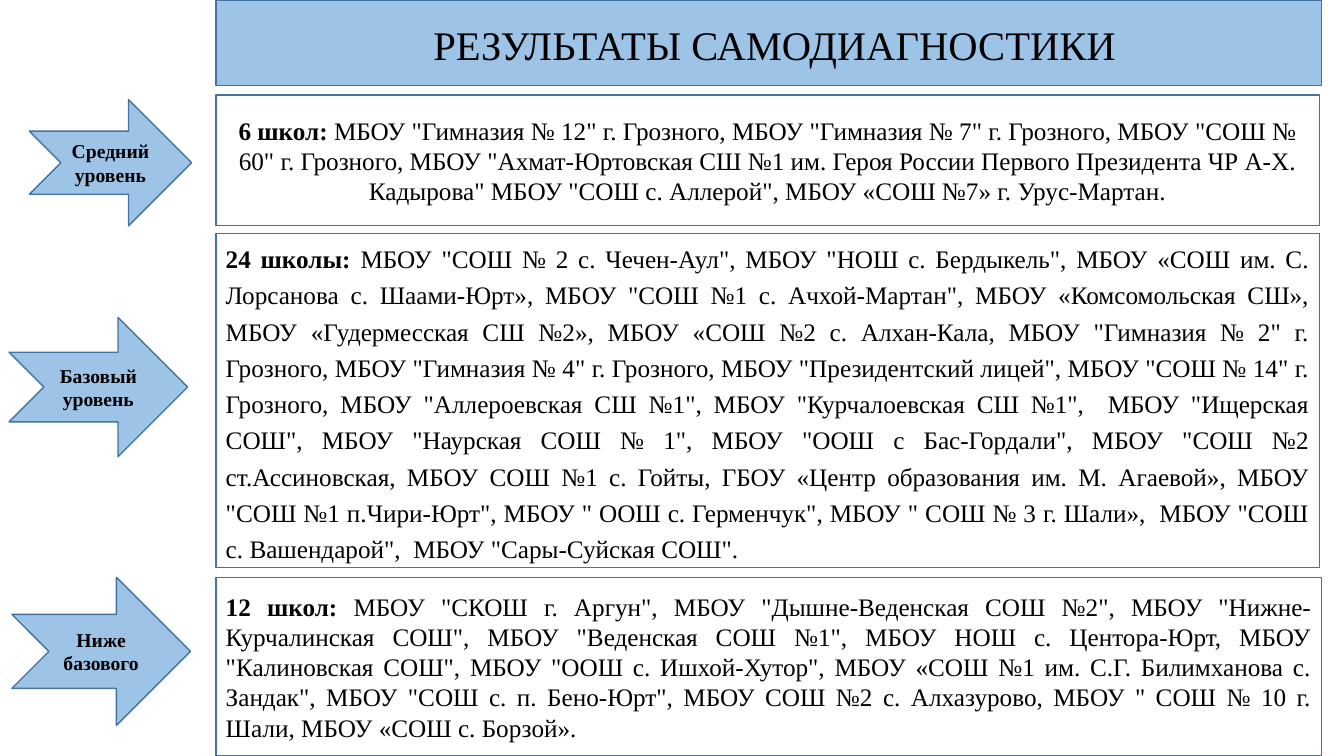
from pptx import Presentation
from pptx.dml.color import RGBColor
from pptx.enum.shapes import MSO_SHAPE
from pptx.enum.text import MSO_ANCHOR, MSO_AUTO_SIZE, PP_ALIGN
from pptx.util import Cm, Pt

RECT = MSO_SHAPE.RECTANGLE
ARROW = MSO_SHAPE.NOTCHED_RIGHT_ARROW
MIDDLE = MSO_ANCHOR.MIDDLE
FIXED = MSO_AUTO_SIZE.NONE
CENTER = PP_ALIGN.CENTER
JUSTIFY = PP_ALIGN.JUSTIFY

TITLE = 'РЕЗУЛЬТАТЫ САМОДИАГНОСТИКИ'
LEVELS = [
    {
        'label': 'Средний уровень',
        'arrow': (0.74, 2.51, 4.09, 3.18),
        'box': (2.39, 27.81, 3.3),
        'align': CENTER,
        'lines': 1.0,
        'count': '6 школ: ',
        'schools': 'МБОУ "Гимназия № 12" г. Грозного, МБОУ "Гимназия № 7" г. Грозного, '
                   'МБОУ "СОШ № 60" г. Грозного, МБОУ "Ахмат-Юртовская СШ №1 им. Героя '
                   'России Первого Президента ЧР А-Х. Кадырова" МБОУ "СОШ с. Аллерой", '
                   'МБОУ «СОШ №7» г. Урус-Мартан.',
    },
    {
        'label': 'Базовый уровень',
        'arrow': (0.23, 8.0, 4.5, 3.51),
        'box': (5.89, 27.81, 8.41),
        'align': JUSTIFY,
        'lines': 1.2,
        'count': '24 школы: ',
        'schools': 'МБОУ "СОШ № 2 с. Чечен-Аул", МБОУ "НОШ с. Бердыкель", МБОУ «СОШ им. '
                   'С. Лорсанова с. Шаами-Юрт», МБОУ "СОШ №1 с. Ачхой-Мартан", МБОУ '
                   '«Комсомольская СШ», МБОУ «Гудермесская СШ №2», МБОУ «СОШ №2 с. '
                   'Алхан-Кала, МБОУ "Гимназия № 2" г. Грозного, МБОУ "Гимназия № 4" г. '
                   'Грозного, МБОУ "Президентский лицей", МБОУ "СОШ № 14" г. Грозного, '
                   'МБОУ "Аллероевская СШ №1", МБОУ "Курчалоевская СШ №1",  МБОУ '
                   '"Ищерская СОШ", МБОУ "Наурская СОШ № 1", МБОУ "ООШ с Бас-Гордали", '
                   'МБОУ "СОШ №2 ст.Ассиновская, МБОУ СОШ №1 с. Гойты, ГБОУ «Центр '
                   'образования им. М. Агаевой», МБОУ "СОШ №1 п.Чири-Юрт", МБОУ " ООШ с. '
                   'Герменчук", МБОУ " СОШ № 3 г. Шали»,  МБОУ "СОШ с. Вашендарой",  '
                   'МБОУ "Сары-Суйская СОШ".',
    },
    {
        'label': 'Ниже базового',
        'arrow': (0.3, 14.55, 4.5, 3.73),
        'box': (14.55, 27.86, 4.5),
        'align': JUSTIFY,
        'lines': 1.0,
        'count': '12 школ: ',
        'schools': 'МБОУ "СКОШ г. Аргун", МБОУ "Дышне-Веденская СОШ №2", МБОУ '
                   '"Нижне-Курчалинская СОШ", МБОУ "Веденская СОШ №1", МБОУ НОШ с. '
                   'Центора-Юрт, МБОУ "Калиновская СОШ", МБОУ "ООШ с. Ишхой-Хутор", МБОУ '
                   '«СОШ №1 им. С.Г. Билимханова с. Зандак", МБОУ "СОШ с. п. Бено-Юрт", '
                   'МБОУ СОШ №2 с. Алхазурово, МБОУ " СОШ № 10 г. Шали, МБОУ «СОШ с. '
                   'Борзой».',
    },
]

THEME = {
    'blue': RGBColor.from_string('9DC3E6'),
    'edge': RGBColor.from_string('43739E'),
    'white': RGBColor.from_string('FFFFFF'),
    'ink': RGBColor.from_string('000000'),
    'font': 'Times New Roman',
    'title': Pt(29),
    'label': Pt(14),
    'body': Pt(18),
    'line': Pt(1),
}
LEFT = 5.44


def paint(shape, fill):
    shape.fill.solid()
    shape.fill.fore_color.rgb = THEME[fill]
    shape.line.color.rgb = THEME['edge']
    shape.line.width = THEME['line']
    shape.shadow.inherit = False
    frame = shape.text_frame
    frame.word_wrap = True
    frame.auto_size = FIXED
    frame.vertical_anchor = MIDDLE
    return frame.paragraphs[0]


def style(font, size):
    font.name = THEME['font']
    font.size = THEME[size]
    font.color.rgb = THEME['ink']


def add_title(slide):
    title = slide.shapes.title
    title.left, title.top = Cm(LEFT), Cm(0)
    title.width, title.height = Cm(27.86), Cm(2.16)
    para = paint(title, 'blue')
    para.alignment = CENTER
    para.line_spacing = 0.9
    gap = para.add_run()
    gap.text = ' '
    gap.font.size = Pt(40)
    gap.font.name = 'Calibri'
    run = para.add_run()
    run.text = TITLE
    style(run.font, 'title')


def add_arrow(slide, level):
    arrow = slide.shapes.add_shape(ARROW, *map(Cm, level['arrow']))
    para = paint(arrow, 'blue')
    para.text = level['label']
    para.alignment = CENTER
    style(para.font, 'label')
    para.font.bold = True


def add_box(slide, level):
    top, width, height = level['box']
    box = slide.shapes.add_shape(RECT, Cm(LEFT), Cm(top), Cm(width), Cm(height))
    para = paint(box, 'white')
    para.alignment = level['align']
    para.line_spacing = level['lines']
    style(para.font, 'body')
    count = para.add_run()
    count.text = level['count']
    count.font.bold = True
    para.add_run().text = level['schools']


def main():
    deck = Presentation()
    deck.slide_width, deck.slide_height = Cm(33.87), Cm(19.05)
    slide = deck.slides.add_slide(deck.slide_layouts[5])
    add_title(slide)
    for level in LEVELS:
        add_arrow(slide, level)
        add_box(slide, level)
    deck.save("out.pptx")


if __name__ == "__main__":
    main()
